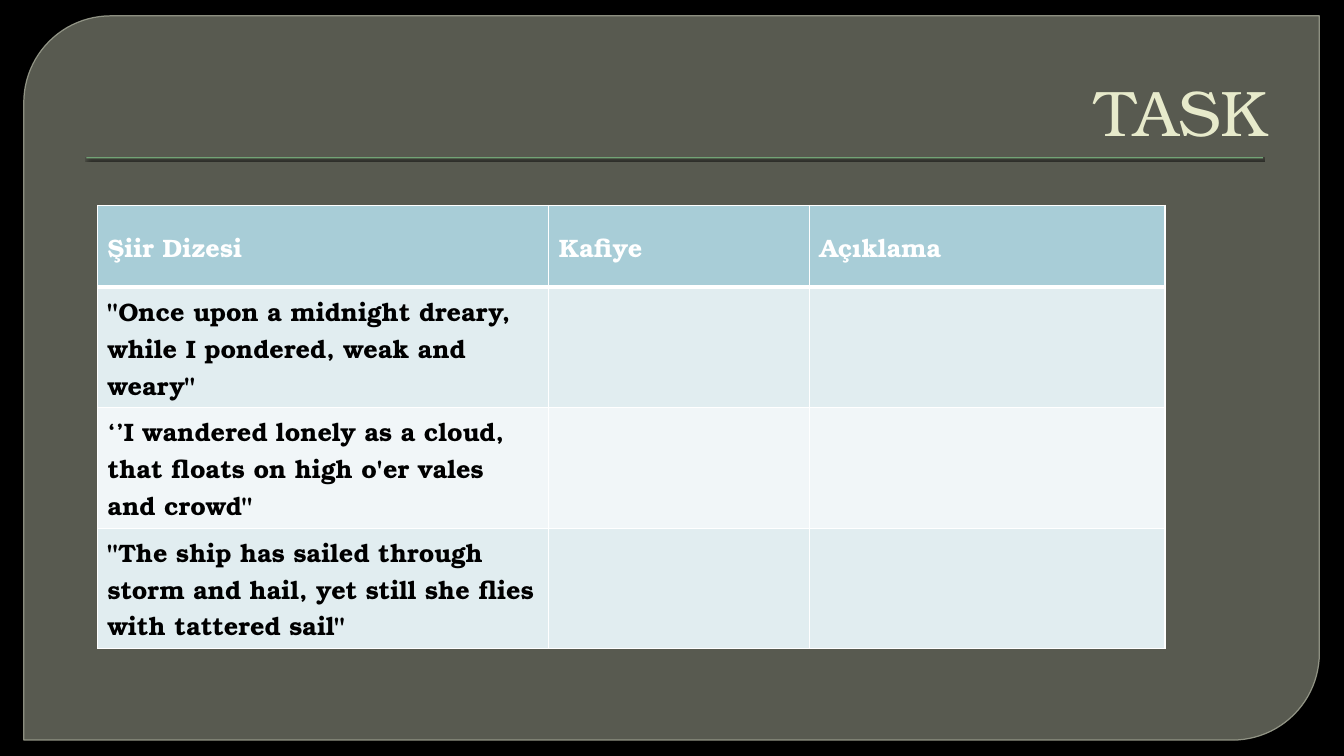
from lxml.etree import SubElement
from pptx import Presentation
from pptx.dml.color import RGBColor
from pptx.enum.shapes import MSO_SHAPE
from pptx.enum.text import MSO_ANCHOR, PP_ALIGN
from pptx.oxml.ns import qn
from pptx.util import Cm, Pt

COLORS = {
    "black": "000000", "white": "FFFFFF", "panel": "888B7B", "edge": "9DA090",
    "rule": "72A376", "title": "E7EACB", "header": "A8CDD7",
    "odd": "E1EDF0", "even": "F1F6F8",
}
FONT = "TeX Gyre Bonum"
HEADERS = ["Şiir Dizesi", "Kafiye", "Açıklama"]
VERSES = [
    '"Once upon a midnight dreary, while I pondered, weak and weary"',
    "‘’I wandered lonely as a cloud, that floats on high o'er vales and crowd\"",
    '"The ship has sailed through storm and hail, yet still she flies with tattered sail"',
]


def rgb(name):
    return RGBColor.from_string(COLORS[name])


def set_alpha(fill_element, percent):
    color = fill_element.find(".//" + qn("a:srgbClr"))
    SubElement(color, qn("a:alpha"), val=str(percent * 1000))


class SlideBuilder:
    """Draw styled elements on one title-only slide."""

    def __init__(self, prs):
        self.s = prs.slides.add_slide(prs.slide_layouts[5])
        self.s.background.fill.solid()
        self.s.background.fill.fore_color.rgb = rgb("black")

    def shape(self, kind, box, color):
        sp = self.s.shapes.add_shape(kind, *map(Cm, box))
        sp.shadow.inherit = False
        sp.fill.solid()
        sp.fill.fore_color.rgb = rgb(color)
        sp.line.fill.background()
        return sp

    def panel(self, box):
        sp = self.shape(MSO_SHAPE.ROUND_2_DIAG_RECTANGLE, box, "panel")
        sp.adjustments[0] = 0.12
        sp.line.color.rgb = rgb("edge")
        sp.line.width = Pt(0.87)
        spPr = sp._element.spPr
        set_alpha(spPr.find(qn("a:solidFill")), 65)
        set_alpha(spPr.find(qn("a:ln")), 88)

    def rule(self, box):
        sp = self.shape(MSO_SHAPE.RECTANGLE, box, "rule")
        effects = sp._element.spPr.find(qn("a:effectLst"))
        shadow = SubElement(effects, qn("a:outerShdw"), blurRad=str(Pt(1)),
                            dist=str(Pt(1)), dir="5400000", rotWithShape="0")
        SubElement(shadow, qn("a:srgbClr"), val=COLORS["black"])
        set_alpha(shadow, 75)

    def text(self, p, text, size, color, bold=False):
        r = p.add_run()
        r.text = text
        r.font.name = FONT
        r.font.size = Pt(size)
        r.font.bold = bold
        r.font.color.rgb = rgb(color)

    def title(self, box, text):
        sp = self.s.shapes.title
        sp.left, sp.top, sp.width, sp.height = map(Cm, box)
        self.s.shapes._spTree.append(sp._element)
        tf = sp.text_frame
        tf.word_wrap = True
        tf.vertical_anchor = MSO_ANCHOR.BOTTOM
        p = tf.paragraphs[0]
        p.alignment = PP_ALIGN.RIGHT
        p._p.get_or_add_pPr().set("marL", str(Cm(0.15)))
        self.text(p, text, 46, "title")

    def borders(self, cell, top, bottom):
        tcPr = cell._tc.get_or_add_tcPr()
        for side, width in (("L", 1), ("R", 1), ("T", top), ("B", bottom)):
            ln = SubElement(tcPr, qn("a:ln" + side), w=str(Pt(width)))
            fill = SubElement(ln, qn("a:solidFill"))
            SubElement(fill, qn("a:srgbClr"), val=COLORS["white"])

    def table(self, box, widths, heights, rows):
        table = self.s.shapes.add_table(len(rows), len(widths), *map(Cm, box)).table
        for column, width in zip(table.columns, widths):
            column.width = Cm(width)
        for i, (row, height, texts) in enumerate(zip(table.rows, heights, rows)):
            row.height = Cm(height)
            fill = "header" if i == 0 else "odd" if i % 2 else "even"
            for cell, text in zip(row.cells, texts):
                self.borders(cell, 3 if i == 1 else 1, 3 if i == 0 else 1)
                cell.fill.solid()
                cell.fill.fore_color.rgb = rgb(fill)
                cell.vertical_anchor = MSO_ANCHOR.MIDDLE
                if text:
                    color = "black" if i else "white"
                    self.text(cell.text_frame.paragraphs[0], text, 18, color, True)


def main():
    prs = Presentation()
    prs.slide_width, prs.slide_height = Cm(33.87), Cm(19.05)
    slide = SlideBuilder(prs)
    slide.panel((0.6, 0.4, 32.65, 18.25))
    slide.rule((2.18, 3.96, 29.65, 0.03))
    slide.title((1.7, 0.7, 30.48, 3.18), "TASK")
    rows = [HEADERS] + [[verse, "", ""] for verse in VERSES]
    slide.table((2.46, 5.18, 26.9, 9.75), (11.37, 6.57, 8.96),
                [2.06] + [2.56] * len(VERSES), rows)
    prs.save("out.pptx")


if __name__ == "__main__":
    main()
